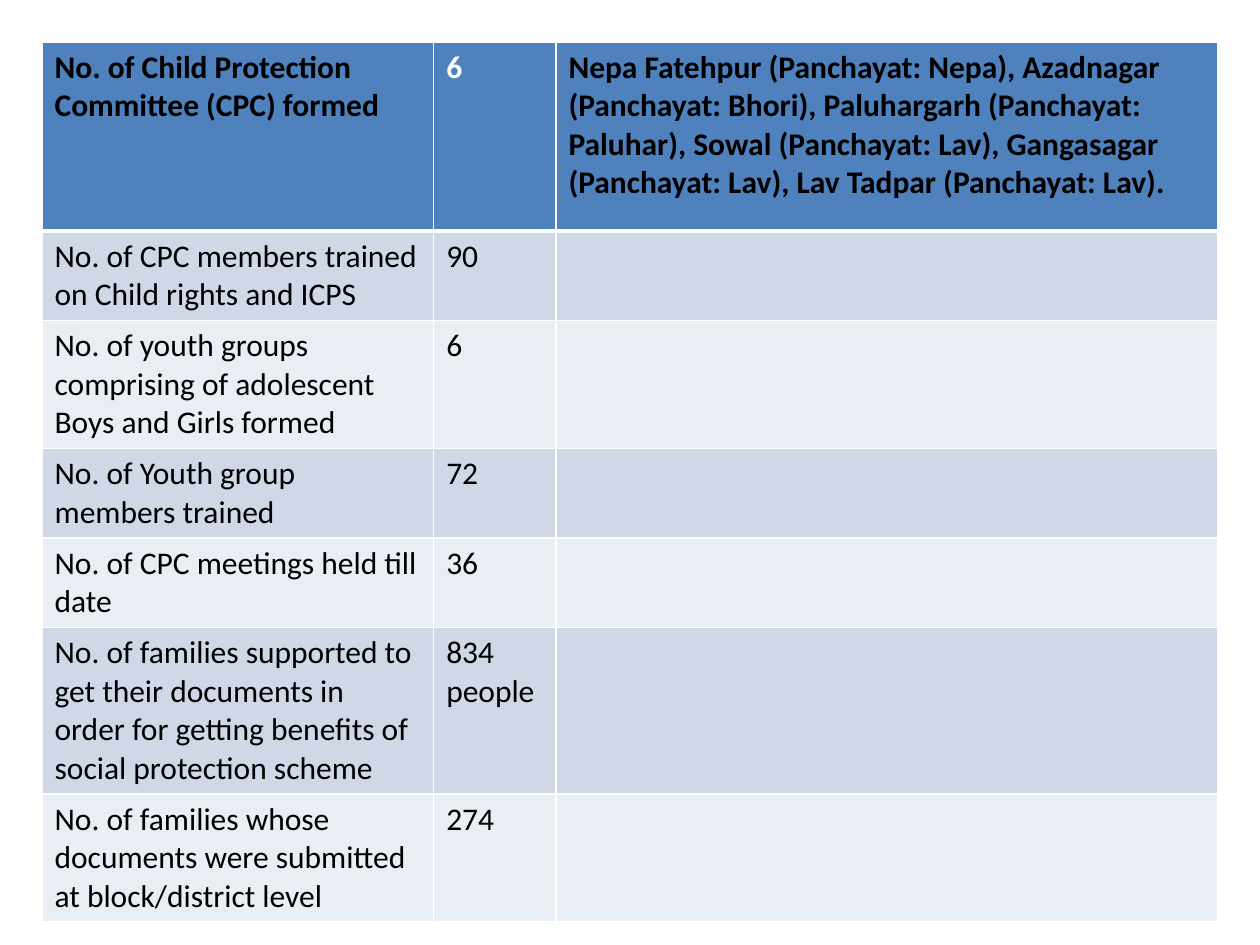
from lxml.etree import SubElement
from pptx import Presentation
from pptx.dml.color import RGBColor as RGB
from pptx.oxml.ns import qn
from pptx.util import Pt

# Content: indicator, count, places
ROWS = [
    ("No. of Child Protection Committee (CPC) formed", "6",
     "Nepa Fatehpur (Panchayat: Nepa), Azadnagar (Panchayat: Bhori), "
     "Paluhargarh (Panchayat: Paluhar), Sowal (Panchayat: Lav), "
     "Gangasagar (Panchayat: Lav), Lav Tadpar (Panchayat: Lav)."),
    ("No. of CPC members trained on Child rights and ICPS", "90", ""),
    ("No. of youth groups comprising of adolescent Boys and Girls formed", "6", ""),
    ("No. of Youth group members trained", "72", ""),
    ("No. of CPC meetings held till date", "36", ""),
    ("No. of families supported to get their documents in order for getting "
     "benefits of social protection scheme", "834 people", ""),
    ("No. of families whose documents were submitted at block/district level",
     "274", ""),
]

THEME = {
    "font": "Calibri", "size": 18,
    "text": "000000", "light": "FFFFFF",
    "header": "4F81BD", "bands": ("D0D8E8", "E9EDF4"),
    "rule": 1, "header_rule": 3,
}

# Layout in points; body rows grow to hold their text
LEFT, TOP, HEIGHT = 24, 24, 496.8
COLS = (223.8, 69.9, 378.3)
HEADER_H, BODY_H = 108, 36


def set_borders(cell, bottom):
    """White rules on all four sides, placed ahead of the cell fill."""
    pr = cell._tc.get_or_add_tcPr()
    for i, side in enumerate("LRTB"):
        width = bottom if side == "B" else THEME["rule"]
        ln = SubElement(pr, qn(f"a:ln{side}"), w=str(Pt(width)))
        fill = SubElement(ln, qn("a:solidFill"))
        SubElement(fill, qn("a:srgbClr"), val=THEME["light"])
        pr.insert(i, ln)


def fill_cell(cell, text, row, col):
    header = row == 0
    fill = THEME["header"] if header else THEME["bands"][(row - 1) % 2]
    cell.fill.solid()
    cell.fill.fore_color.rgb = RGB.from_string(fill)
    set_borders(cell, THEME["header_rule"] if header else THEME["rule"])

    cell.text = text
    p = cell.text_frame.paragraphs[0]
    p.font.size = Pt(THEME["size"])
    for r in p.runs:
        color = THEME["light"] if header and col == 1 else THEME["text"]
        r.font.name = THEME["font"]
        r.font.size = Pt(THEME["size"])
        r.font.bold = header
        r.font.color.rgb = RGB.from_string(color)


def main():
    prs = Presentation()
    prs.slide_width, prs.slide_height = Pt(720), Pt(540)
    s = prs.slides.add_slide(prs.slide_layouts[6])

    # Table grid
    frame = s.shapes.add_table(len(ROWS), len(COLS), Pt(LEFT), Pt(TOP),
                               Pt(sum(COLS)), Pt(HEIGHT))
    table = frame.table
    for column, width in zip(table.columns, COLS):
        column.width = Pt(width)

    # Header and banded rows
    for i, values in enumerate(ROWS):
        table.rows[i].height = Pt(BODY_H if i else HEADER_H)
        for j, text in enumerate(values):
            fill_cell(table.cell(i, j), text, i, j)
    frame.height = Pt(HEIGHT)

    prs.save("out.pptx")


if __name__ == "__main__":
    main()
